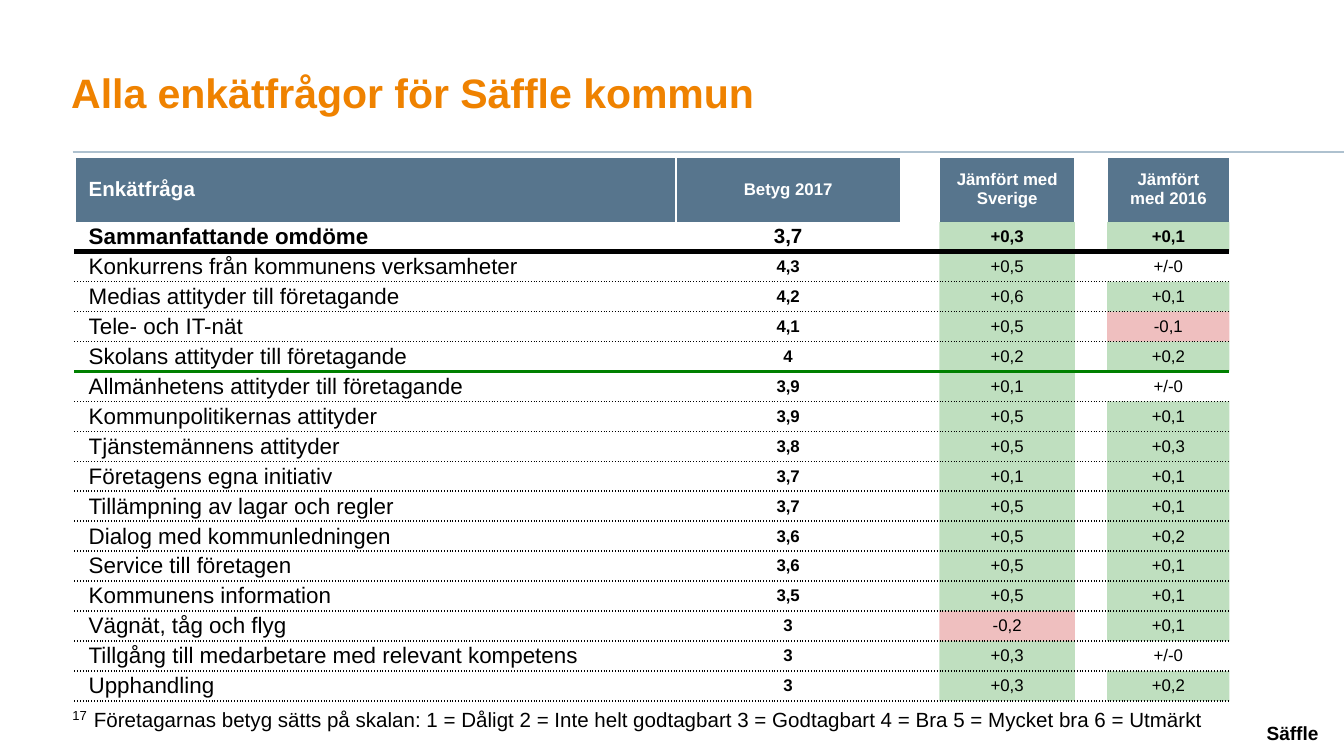
from lxml import etree
from pptx import Presentation
from pptx import util as u
from pptx.dml.color import RGBColor
from pptx.enum import shapes, text
from pptx.oxml.ns import qn

COLS = 100
ROWS = COLS * 9 / 16
ORANGE, BLUE, RULE = "EF8200", "57758D", "AEC1CF"
BLACK, WHITE, GREEN, RED = "000000", "FFFFFF", "008000", "C00000"
LEFT, CENTER, RIGHT = text.PP_ALIGN.LEFT, text.PP_ALIGN.CENTER, text.PP_ALIGN.RIGHT
TOP, MIDDLE, BOTTOM = text.MSO_ANCHOR.TOP, text.MSO_ANCHOR.MIDDLE, text.MSO_ANCHOR.BOTTOM
NO_STYLE = "{2D5ABB26-0587-4C30-8999-92F81FD0307C}"

HEADER = ["Enkätfråga", "Betyg 2017", "Jämfört med Sverige", "Jämfört med 2016"]
GRADES = [
    ["Sammanfattande omdöme", "3,7", "+0,3", "+0,1"],
    ["Konkurrens från kommunens verksamheter", "4,3", "+0,5", "+/-0"],
    ["Medias attityder till företagande", "4,2", "+0,6", "+0,1"],
    ["Tele- och IT-nät", "4,1", "+0,5", "-0,1"],
    ["Skolans attityder till företagande", "4", "+0,2", "+0,2"],
    ["Allmänhetens attityder till företagande", "3,9", "+0,1", "+/-0"],
    ["Kommunpolitikernas attityder", "3,9", "+0,5", "+0,1"],
    ["Tjänstemännens attityder", "3,8", "+0,5", "+0,3"],
    ["Företagens egna initiativ", "3,7", "+0,1", "+0,1"],
    ["Tillämpning av lagar och regler", "3,7", "+0,5", "+0,1"],
    ["Dialog med kommunledningen", "3,6", "+0,5", "+0,2"],
    ["Service till företagen", "3,6", "+0,5", "+0,1"],
    ["Kommunens information", "3,5", "+0,5", "+0,1"],
    ["Vägnät, tåg och flyg", "3", "-0,2", "+0,1"],
    ["Tillgång till medarbetare med relevant kompetens", "3", "+0,3", "+/-0"],
    ["Upphandling", "3", "+0,3", "+0,2"],
]
WIDTHS = [44.7, 16.7, 2.9, 10.1, 2.3, 9.1]
HEAD_H, ROW_H = 4.8, 2.23


def rgb(color):
    return RGBColor.from_string(color)


def write(tf, words, size=11, color=BLACK, bold=False, align=LEFT, anchor=TOP):
    tf.word_wrap = True
    tf.vertical_anchor = anchor
    p = tf.paragraphs[0]
    p.alignment = align
    r = p.add_run()
    r.text = words
    r.font.name = "Arial"
    r.font.size = u.Pt(size)
    r.font.bold = bold
    r.font.color.rgb = rgb(color)


def border(cell, side, color, width=1, dash="solid"):
    ln = etree.SubElement(cell._tc.get_or_add_tcPr(), qn(f"a:ln{side}"), w=str(u.Pt(width)))
    if color is None:
        etree.SubElement(ln, qn("a:noFill"))
        return
    fill = etree.SubElement(ln, qn("a:solidFill"))
    etree.SubElement(fill, qn("a:srgbClr"), val=color)
    etree.SubElement(ln, qn("a:prstDash"), val=dash)


def paint(cell, color, alpha=100):
    cell.fill.solid()
    cell.fill.fore_color.rgb = rgb(color)
    if alpha < 100:
        clr = cell._tc.tcPr.find(qn("a:solidFill")).find(qn("a:srgbClr"))
        etree.SubElement(clr, qn("a:alpha"), val=str(alpha * 1000))


def rule_below(row):
    return {0: (None,), 1: (BLACK, 3), 5: (GREEN, 2)}.get(row, (BLACK, 1, "sysDot"))


def change_color(words):
    return {"+0": GREEN, "-0": RED}.get(words[:2], WHITE)


class Slide:
    def __init__(self, prs):
        self.unit_x, self.unit_y = prs.slide_width / COLS, prs.slide_height / ROWS
        self.s = prs.slides.add_slide(prs.slide_layouts[5])

    def place(self, x, y, w, h):
        return [round(v * k) for v, k in zip((x, y, w, h), (self.unit_x, self.unit_y) * 2)]

    def title(self, words, box, **fmt):
        sp = self.s.shapes.title
        sp.left, sp.top, sp.width, sp.height = self.place(*box)
        tf = sp.text_frame
        tf.auto_size = text.MSO_AUTO_SIZE.NONE
        tf.margin_left = tf.margin_right = tf.margin_top = 0
        tf.margin_bottom = u.Inches(0.04)
        write(tf, words, **fmt)

    def label(self, words, box, inset=True, **fmt):
        tf = self.s.shapes.add_textbox(*self.place(*box)).text_frame
        if not inset:
            tf.margin_left = tf.margin_right = tf.margin_top = tf.margin_bottom = 0
        write(tf, words, **fmt)

    def line(self, x1, y1, x2, y2, color, width=1):
        ends = self.place(x1, y1, x2, y2)
        sp = self.s.shapes.add_connector(shapes.MSO_CONNECTOR.STRAIGHT, *ends)
        sp.line.color.rgb = rgb(color)
        sp.line.width = u.Pt(width)
        etree.SubElement(sp._element.spPr, qn("a:effectLst"))

    def table(self, x, y):
        rows = [HEADER] + GRADES
        box = self.place(x, y, sum(WIDTHS), HEAD_H + ROW_H * len(GRADES))
        tbl = self.s.shapes.add_table(len(rows), len(WIDTHS), *box).table
        tbl.horz_banding = False
        tbl._tbl.tblPr.find(qn("a:tableStyleId")).text = NO_STYLE
        for col, width in zip(tbl.columns, WIDTHS):
            col.width = round(width * self.unit_x)
        for i, (question, grade, sweden, last_year) in enumerate(rows):
            tbl.rows[i].height = round((ROW_H if i else HEAD_H) * self.unit_y)
            for j, words in enumerate((question, grade, "", sweden, "", last_year)):
                self.cell(tbl.cell(i, j), i, j, words)

    def cell(self, cell, i, j, words):
        cell.margin_top = cell.margin_bottom = 0
        side = WHITE if i == 0 or j < 2 else None
        border(cell, "L", side)
        border(cell, "R", side)
        border(cell, "T", *(rule_below(i - 1) if i else (WHITE,)))
        border(cell, "B", *rule_below(i))
        if not words:
            paint(cell, WHITE)
            etree.SubElement(cell.text_frame.paragraphs[0]._p, qn("a:endParaRPr"), sz="900")
            return
        if i == 0:
            paint(cell, BLUE)
        elif j > 2:
            paint(cell, change_color(words), 25)
        size = 9
        if j == 0:
            size = 12 if i else 11
        elif (i, j) == (1, 1):
            size = 11
        write(cell.text_frame, words, size=size, color=BLACK if i else WHITE,
              bold=i < 2 or j == 1, align=CENTER if j else LEFT)
        cell.vertical_anchor = MIDDLE


def main():
    prs = Presentation()
    prs.slide_width = u.Inches(10)
    prs.slide_height = prs.slide_width * 9 // 16
    slide = Slide(prs)
    slide.line(5.4, 11.3, COLS, 11.3, RULE)
    slide.label("Säffle", (51.8, 52.4, 46.3, 3), inset=False,
                size=10.2, bold=True, align=RIGHT, anchor=BOTTOM)
    slide.title("Alla enkätfrågor för Säffle kommun", (5.3, 1.5, 74.7, 7.6),
                size=22, color=ORANGE, bold=True, anchor=BOTTOM)
    slide.label("17", (4.4, 52.6, 3.4, 1.3), size=7, anchor=MIDDLE)
    slide.label("Företagarnas betyg sätts på skalan: 1 = Dåligt 2 = Inte helt godtagbart "
                "3 = Godtagbart 4 = Bra 5 = Mycket bra 6 = Utmärkt", (6, 52.1, 85.2, 2.9))
    slide.table(5.6, 11.7)
    prs.save("out.pptx")


if __name__ == "__main__":
    main()
